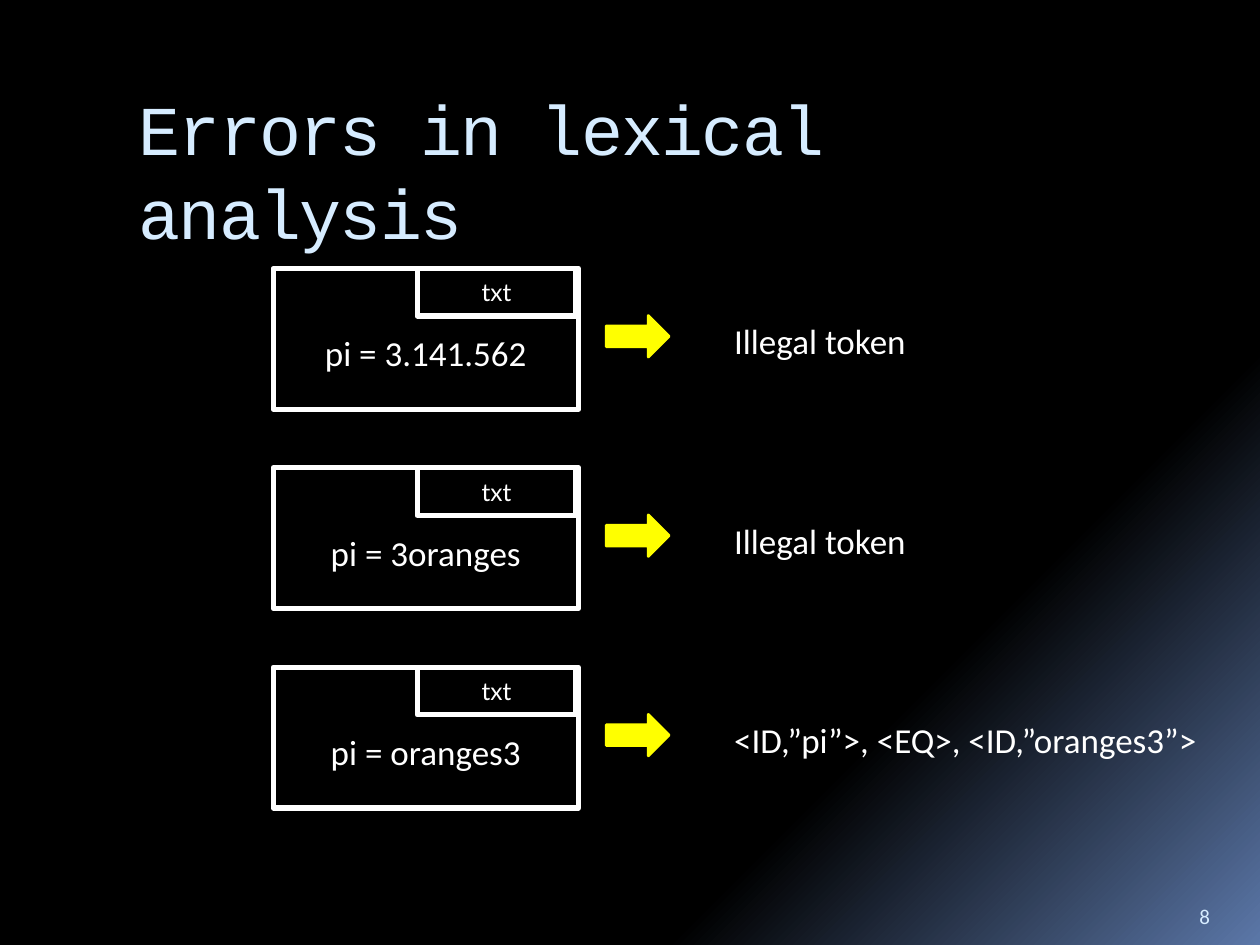
from dataclasses import dataclass

from pptx import Presentation
from pptx.dml.color import RGBColor
from pptx.enum.shapes import MSO_SHAPE
from pptx.enum.text import MSO_ANCHOR, PP_ALIGN
from pptx.shapes.autoshape import Shape
from pptx.shapes.group import GroupShape
from pptx.slide import Slide
from pptx.util import Cm, Pt

WHITE = "FFFFFF"
BLACK = "000000"
YELLOW = "FFFF00"
PALE_BLUE = "D6ECFF"
STEEL_BLUE = "5B77A8"

FIRST_ROW_TOP = 5.41
ROW_PITCH = 4.02


@dataclass(frozen=True)
class Box:
    """Left, top, width and height in centimetres."""
    left: float
    top: float
    width: float
    height: float

    def lengths(self) -> tuple[Cm, Cm, Cm, Cm]:
        return Cm(self.left), Cm(self.top), Cm(self.width), Cm(self.height)


@dataclass(frozen=True)
class Example:
    source: str
    result: str
    result_width: float


EXAMPLES = [
    Example("pi = 3.141.562", "Illegal token", 4.09),
    Example("pi = 3oranges", "Illegal token", 4.09),
    Example("pi = oranges3", "<ID,”pi”>, <EQ>, <ID,”oranges3”>", 10.24),
]


def rgb(color: str) -> RGBColor:
    return RGBColor.from_string(color)


def write(shape: Shape, text: str, size: float, color: str = WHITE,
          font: str = "Calibri", alignment: PP_ALIGN = PP_ALIGN.LEFT) -> None:
    shape.text_frame.text = text
    paragraph = shape.text_frame.paragraphs[0]
    paragraph.alignment = alignment
    run_font = paragraph.runs[0].font
    run_font.name = font
    run_font.size = Pt(size)
    run_font.color.rgb = rgb(color)


def set_background(slide: Slide) -> None:
    fill = slide.background.fill
    fill.gradient()
    fill.gradient_angle = 315
    for stop, position, color in zip(
            fill.gradient_stops, (0.73, 1), (BLACK, STEEL_BLUE)):
        stop.position = position
        stop.color.rgb = rgb(color)


def add_title(slide: Slide, text: str) -> None:
    title = slide.shapes.title
    title.left, title.top, title.width, title.height = Box(
        2.54, 1.42, 21.59, 2.54).lengths()
    write(title, text, 40, PALE_BLUE, "Courier New")
    title.text_frame.vertical_anchor = MSO_ANCHOR.TOP
    title.text_frame.margin_top = Cm(0.3)
    paragraph = title.text_frame.paragraphs[0]
    paragraph.line_spacing = Pt(48)
    paragraph.runs[0].font._element.set("spc", "-100")


def add_text(slide: Slide, box: Box, text: str, size: float,
             color: str = WHITE, anchor: MSO_ANCHOR = MSO_ANCHOR.TOP,
             wrap: bool = False) -> None:
    shape = slide.shapes.add_textbox(*box.lengths())
    write(shape, text, size, color)
    shape.text_frame.word_wrap = wrap
    shape.text_frame.vertical_anchor = anchor


def add_frame(group: GroupShape, box: Box, text: str, size: float,
              font: str) -> Shape:
    """Add an unfilled white-bordered rectangle with centred text."""
    frame = group.shapes.add_shape(MSO_SHAPE.RECTANGLE, *box.lengths())
    frame.shadow.inherit = False
    frame.fill.background()
    frame.line.color.rgb = rgb(WHITE)
    frame.line.width = Pt(3)
    write(frame, text, size, font=font, alignment=PP_ALIGN.CENTER)
    frame.text_frame.vertical_anchor = MSO_ANCHOR.MIDDLE
    return frame


def add_arrow(slide: Slide, box: Box) -> None:
    arrow = slide.shapes.add_shape(MSO_SHAPE.RIGHT_ARROW, *box.lengths())
    arrow.shadow.inherit = False
    arrow.fill.solid()
    arrow.fill.fore_color.rgb = rgb(YELLOW)
    arrow.line.color.rgb = rgb(YELLOW)
    arrow.line.width = Pt(1.5)


def add_example(slide: Slide, example: Example, top: float) -> None:
    file_group = slide.shapes.add_group_shape()
    body = add_frame(file_group, Box(5.51, top, 6.15, 2.84),
                     example.source, 20, "Calibri")
    body.text_frame.margin_top = Cm(0.69)
    add_frame(file_group, Box(8.41, top, 3.2, 0.96), "txt", 14, "Lato")
    add_arrow(slide, Box(12.22, top + 0.95, 1.27, 0.84))
    add_text(slide, Box(14.55, top + 0.91, example.result_width, 1.12),
             example.result, 20)


def main() -> None:
    presentation = Presentation()
    presentation.slide_width = Cm(25.4)
    presentation.slide_height = Cm(19.05)
    slide = presentation.slides.add_slide(presentation.slide_layouts[5])
    set_background(slide)
    add_title(slide, "Errors in lexical analysis")
    add_text(slide, Box(23.93, 17.83, 1.27, 1.02), "8", 12, PALE_BLUE,
             MSO_ANCHOR.BOTTOM, wrap=True)
    for row, example in enumerate(EXAMPLES):
        add_example(slide, example, FIRST_ROW_TOP + row * ROW_PITCH)
    presentation.save("out.pptx")


if __name__ == "__main__":
    main()
